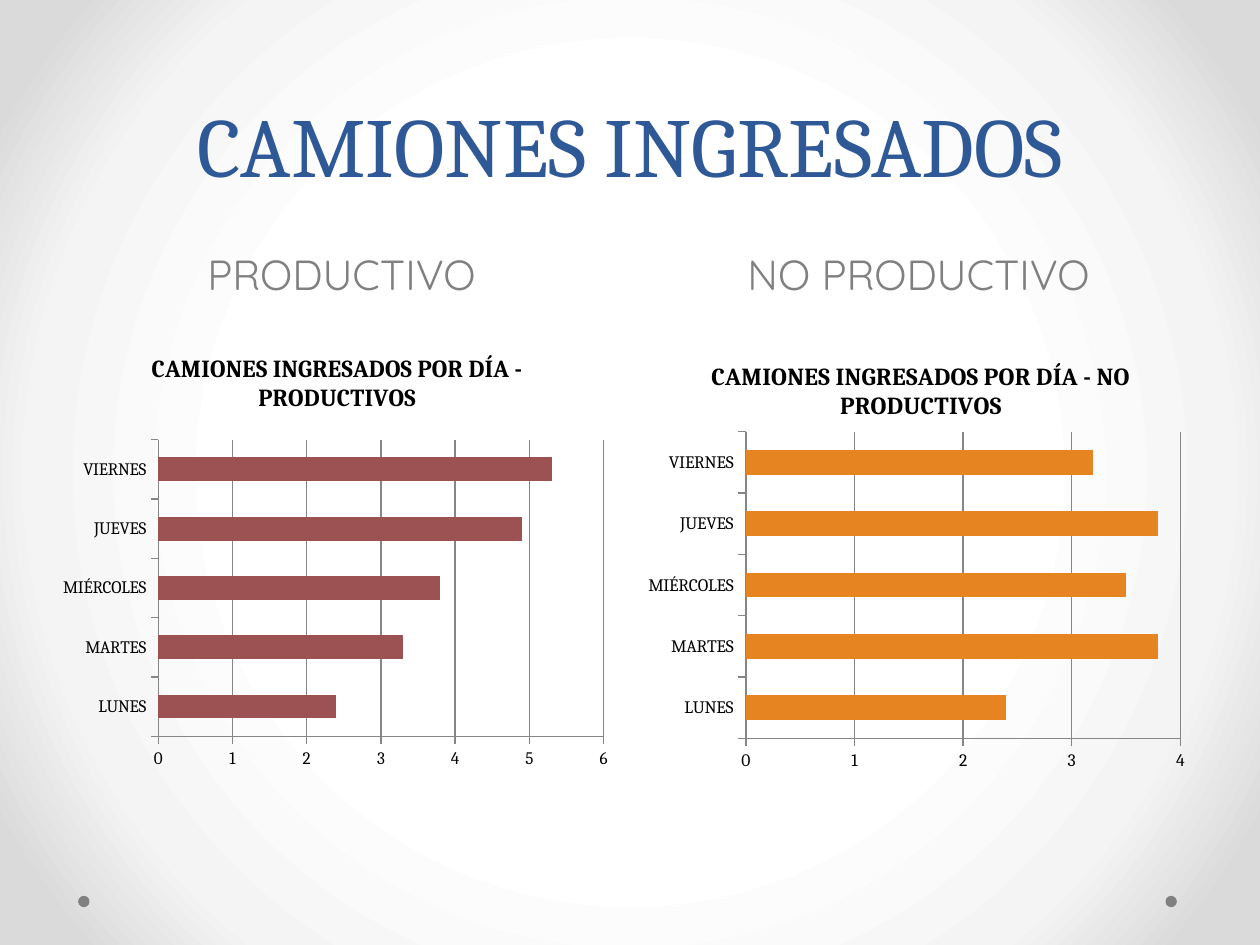
import pptx
import pptx.chart.data
import pptx.dml.color
import pptx.enum.chart
import pptx.enum.shapes
import pptx.enum.text
import pptx.oxml.ns
import pptx.util
from dataclasses import dataclass
from lxml import etree

Inches, Pt = pptx.util.Inches, pptx.util.Pt
qn = pptx.oxml.ns.qn


@dataclass(frozen=True)
class Theme:
    heading_font: str = "Cambria"
    label_font: str = "Quicksand"
    title_color: str = "2F5897"
    gray: str = "808080"
    axis: str = "868686"
    black: str = "000000"
    productive: str = "9C5252"
    unproductive: str = "E68422"
    title_size: int = 48
    label_size: int = 24
    chart_title_size: int = 14
    chart_size: int = 10
    background: tuple = ((50, "FFFFFF"), (76, "F4F4F4"), (92, "DADADA"))


def rgb(color):
    return pptx.dml.color.RGBColor.from_string(color)


class Builder:
    def __init__(self, slide, theme):
        self.s, self.theme = slide, theme

    def background(self):
        self.s.background.fill.gradient()
        grad = self.s.element.find(".//" + qn("a:gradFill"))
        for child in list(grad):
            grad.remove(child)
        stops = etree.SubElement(grad, qn("a:gsLst"))
        for pos, color in self.theme.background:
            gs = etree.SubElement(stops, qn("a:gs"), pos=str(pos * 1000))
            etree.SubElement(gs, qn("a:srgbClr"), val=color)
        circle = etree.SubElement(grad, qn("a:path"), {"path": "circle"})
        center = dict.fromkeys("ltrb", "50000")
        etree.SubElement(circle, qn("a:fillToRect"), center)

    def dot(self, x, y, size):
        sp = self.s.shapes.add_shape(pptx.enum.shapes.MSO_SHAPE.OVAL,
                                     Inches(x), Inches(y), Inches(size), Inches(size))
        sp.shadow.inherit = False
        sp.fill.solid()
        sp.fill.fore_color.rgb = rgb(self.theme.gray)
        sp.line.fill.background()

    def style_font(self, font, size, color, name, bold=False):
        font.size, font.name, font.bold = Pt(size), name, bold
        font.color.rgb = rgb(color)

    def text(self, text, box, size, color, font, line_spacing=None):
        tf = self.s.shapes.add_textbox(*map(Inches, box)).text_frame
        tf.word_wrap = True
        tf.vertical_anchor = pptx.enum.text.MSO_ANCHOR.BOTTOM
        tf.text = text
        p = tf.paragraphs[0]
        p.alignment = pptx.enum.text.PP_ALIGN.CENTER
        p.line_spacing = line_spacing
        self.style_font(p.runs[0].font, size, color, font)

    def place(self, parent, before, x, y, w=None, h=None, inner=False):
        """Give a chart title or plot area a fixed place, in parts of the chart."""
        for old in parent.findall(qn("c:layout")):
            parent.remove(old)
        layout = etree.Element(qn("c:layout"))
        manual = etree.SubElement(layout, qn("c:manualLayout"))
        settings = [("layoutTarget", "inner" if inner else None),
                    ("xMode", "edge"), ("yMode", "edge"),
                    ("x", x), ("y", y), ("w", w), ("h", h)]
        for tag, value in settings:
            if value is not None:
                etree.SubElement(manual, qn("c:" + tag), val=str(value))
        parent.insert(before, layout)

    def bar_chart(self, title, days, values, color, box, title_at, plot):
        t = self.theme
        data = pptx.chart.data.CategoryChartData(number_format="0.0")
        data.categories = days
        data.add_series(title, values)
        chart = self.s.shapes.add_chart(pptx.enum.chart.XL_CHART_TYPE.BAR_CLUSTERED,
                                        *map(Inches, box), data).chart
        self.style_font(chart.font, t.chart_size, t.black, t.heading_font)
        chart.has_legend = False

        # Title
        chart.has_title = True
        tf = chart.chart_title.text_frame
        tf.text = title
        self.style_font(tf.paragraphs[0].runs[0].font, t.chart_title_size,
                        t.black, t.heading_font, bold=True)
        chart.chart_title.include_in_layout = False
        title_xml = chart.element.find(".//" + qn("c:title"))
        self.place(title_xml, 1, *title_at)
        self.place(chart.element.find(".//" + qn("c:plotArea")), 0, *plot, inner=True)

        # Bars
        bars = chart.plots[0]
        bars.gap_width = 150
        bars.vary_by_categories = False
        fill = bars.series[0].format.fill
        fill.solid()
        fill.fore_color.rgb = rgb(color)

        # Axes
        for axis in (chart.category_axis, chart.value_axis):
            axis.major_tick_mark = pptx.enum.chart.XL_TICK_MARK.OUTSIDE
            axis.minor_tick_mark = pptx.enum.chart.XL_TICK_MARK.NONE
            axis.format.line.color.rgb = rgb(t.axis)
        axis = chart.value_axis
        axis.has_major_gridlines = True
        axis.major_gridlines.format.line.color.rgb = rgb(t.axis)
        axis.minimum_scale, axis.major_unit = 0, 1
        axis.maximum_scale = int(max(values)) + 1
        axis.tick_labels.number_format = "0"
        axis.tick_labels.number_format_is_linked = False


def main():
    prs = pptx.Presentation()
    prs.slide_width, prs.slide_height = Inches(10), Inches(7.5)
    theme = Theme()
    b = Builder(prs.slides.add_slide(prs.slide_layouts[6]), theme)

    # Backdrop
    b.background()
    for x in (9.25, 0.62):
        b.dot(x, 7.11, 0.09)

    # Two columns: heading above chart
    days = ["LUNES", "MARTES", "MIÉRCOLES", "JUEVES", "VIERNES"]
    left, right, width = 0.5, 5.08, 4.42
    columns = [
        (left, "PRODUCTIVO", [2.4, 3.3, 3.8, 4.9, 5.3], theme.productive,
         2.42, 4.28, (0.13, 0.08), (0.15, 0.25, 0.82, 0.55)),
        (right, "NO PRODUCTIVO", [2.4, 3.8, 3.5, 3.8, 3.2], theme.unproductive,
         2.65, 3.53, (0.12, 0.05), (0.19, 0.22, 0.78, 0.69)),
    ]
    for x, name, values, color, top, height, title_at, plot in columns:
        b.text(name, (x, 1.75, width, 0.67), theme.label_size, theme.gray, theme.label_font)
        b.bar_chart(f"CAMIONES INGRESADOS POR DÍA - {name}S", days, values, color,
                    (x, top, width, height), title_at, plot)

    # Title
    b.text("CAMIONES INGRESADOS", (0.5, 0.52, 9, 1.07), theme.title_size,
           theme.title_color, theme.heading_font, line_spacing=Pt(58))

    prs.save("out.pptx")


if __name__ == "__main__":
    main()
